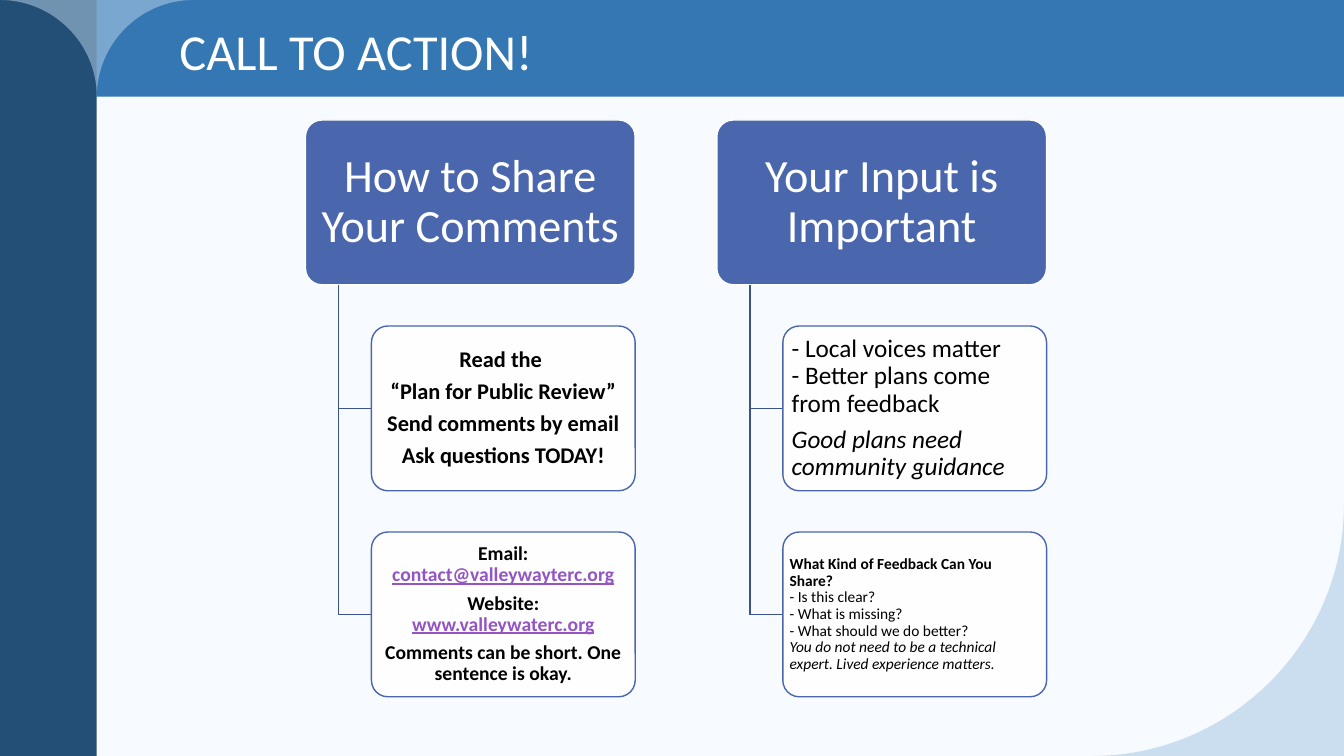
from lxml import etree
from pptx import Presentation
from pptx.dml.color import RGBColor
from pptx.enum import shapes, text
from pptx.oxml import ns
from pptx.util import Inches, Pt

BANNER, SIDEBAR, CORNER_TINT, SWOOSH = "3477B2", "234F77", "C0D8ED", "A1C4E3"
HEADING_FILL, BRANCH, LINK = "4A66AC", "3B528A", "9454C3"
PAGE, WHITE, BLACK = "F7FAFE", "FFFFFF", "000000"
BAND = 0.96
CENTER, LEFT = text.PP_ALIGN.CENTER, text.PP_ALIGN.LEFT


def color(hex_string):
    return RGBColor.from_string(hex_string)


def quarter(start, corner, end):
    """Bezier points of a quarter circle that bulges towards corner."""
    controls = [tuple(a + 0.55 * (c - a) for a, c in zip(point, corner))
                for point in (start, end)]
    return controls + [end]


class SlideBuilder:
    """Holds the current slide and the shared text style."""

    font = "Calibri"
    line_spacing = 0.9
    space_ratio = 0.36

    def __init__(self, presentation):
        self.slide = presentation.slides.add_slide(presentation.slide_layouts[5])
        background = self.slide.background.fill
        background.solid()
        background.fore_color.rgb = color(PAGE)

    def paint(self, shape, fill=None, line=None, opacity=100):
        shape.shadow.inherit = False
        if fill:
            shape.fill.solid()
            shape.fill.fore_color.rgb = color(fill)
            if opacity < 100:
                tint = shape.element.spPr.find(ns.qn("a:solidFill"))[0]
                etree.SubElement(tint, ns.qn("a:alpha"), val=str(opacity * 1000))
        else:
            shape.fill.background()
        if line:
            shape.line.color.rgb = color(line)
            shape.line.width = Pt(1)
        else:
            shape.line.fill.background()

    def box(self, kind, left, top, width, height, **paint):
        shape = self.slide.shapes.add_shape(
            kind, Inches(left), Inches(top), Inches(width), Inches(height))
        self.paint(shape, **paint)
        return shape

    def outline(self, start, *segments, close=True, **paint):
        """Freeform; a segment is a list of one point (line) or three (curve)."""
        scaled = [(Inches(x), Inches(y)) for segment in segments for x, y in segment]
        builder = self.slide.shapes.build_freeform(Inches(start[0]), Inches(start[1]))
        builder.add_line_segments(scaled, close=close)
        shape = builder.convert_to_shape()
        lines = iter(list(shape.element.iter(ns.qn("a:lnTo"))))
        for segment in segments:
            members = [next(lines) for _ in segment]
            if len(members) == 3:
                curve = etree.Element(ns.qn("a:cubicBezTo"))
                members[0].addprevious(curve)
                for member in members:
                    curve.append(member[0])
                    member.getparent().remove(member)
        self.paint(shape, **paint)

    def title(self, words, left, top, width, height):
        title = self.slide.shapes.title
        title.left, title.top = Inches(left), Inches(top)
        title.width, title.height = Inches(width), Inches(height)
        frame = title.text_frame
        frame.text = words
        frame.vertical_anchor = text.MSO_ANCHOR.MIDDLE
        paragraph = frame.paragraphs[0]
        paragraph.alignment = LEFT
        self.style(paragraph.font, 36, WHITE)
        title.element.getparent().append(title.element)  # in front of the banner

    def style(self, font, size, ink, bold=False):
        font.name, font.size, font.bold = self.font, Pt(size), bold
        font.color.rgb = color(ink)

    def card(self, left, top, width, height, paragraphs, size, ink=BLACK, align=CENTER,
             bold=False, inset=(0.03, 0.02, 0.03), break_size=None, **paint):
        """Rounded box; a paragraph lists (words, flags), inset is left, top/bottom, right."""
        shape = self.box(shapes.MSO_SHAPE.ROUNDED_RECTANGLE, left, top, width, height, **paint)
        shape.adjustments[0] = 0.1
        frame = shape.text_frame
        frame.word_wrap = True
        frame.vertical_anchor = text.MSO_ANCHOR.MIDDLE
        frame.margin_left, frame.margin_right = Inches(inset[0]), Inches(inset[2])
        frame.margin_top = frame.margin_bottom = Inches(inset[1])
        for index, runs in enumerate(paragraphs):
            paragraph = frame.add_paragraph() if index else frame.paragraphs[0]
            paragraph.alignment = align
            paragraph.line_spacing = self.line_spacing
            paragraph.space_after = Pt(size * self.space_ratio)
            self.style(paragraph.font, size, ink, bold)
            for words, flags in runs:
                self.run(paragraph, words, flags, break_size or size)

    def run(self, paragraph, words, flags, break_size):
        for index, line in enumerate(words.split("\n")):
            if index:
                paragraph.add_line_break()
                line_break = paragraph._p.findall(ns.qn("a:br"))[-1]
                etree.SubElement(line_break, ns.qn("a:rPr"), sz=str(break_size * 100))
            if not line:
                continue
            line_run = paragraph.add_run()
            line_run.text = line
            if flags == "bold":
                line_run.font.bold = True
            elif flags == "italic":
                line_run.font.italic = True
            elif flags == "link":
                line_run.font.underline = True
                line_run.font.color.rgb = color(LINK)


def draw_frame(builder):
    rectangle = shapes.MSO_SHAPE.RECTANGLE
    builder.box(rectangle, 0, 0, 13.33, BAND, fill=BANNER)
    builder.box(rectangle, 0, 0, BAND, 7.5, fill=SIDEBAR)
    right, tip, left = (2 * BAND, 0), (BAND, BAND), (0, 0)
    builder.outline(right, quarter(right, (BAND, 0), tip), quarter(tip, (BAND, 0), left),
                    fill=CORNER_TINT, opacity=50)
    upper, corner, lower = (13.33, 5), (13.33, 7.5), (10.83, 7.5)
    builder.outline(upper, [corner], [lower], quarter(lower, corner, upper),
                    fill=SWOOSH, opacity=50)


def draw_column(builder, left, heading, cards):
    top, width = 1.19, 3.27
    height, indent = width / 2, width / 10
    pitch = height * 1.25
    builder.card(left, top, width, height, [[(heading, "")]], 33, WHITE,
                 inset=(0.07, 0.05, 0.07), fill=HEADING_FILL, line=WHITE)
    trunk, card_left = left + indent, left + 2 * indent
    for row, card in enumerate(cards, 1):
        card_top = top + row * pitch
        middle = card_top + height / 2
        builder.outline((trunk, top + height), [(trunk, middle)], [(card_left, middle)],
                        close=False, line=BRANCH)
        builder.card(card_left, card_top, width - 2 * indent, height,
                     fill=WHITE, opacity=90, line=HEADING_FILL, **card)


def main():
    presentation = Presentation()
    presentation.slide_width, presentation.slide_height = Inches(13.33), Inches(7.5)
    builder = SlideBuilder(presentation)
    draw_frame(builder)

    steps = ["Read the ", "“Plan for Public Review”", "Send comments by email",
             "Ask questions TODAY!"]
    contacts = [
        [("Email: ", ""), ("contact@valleywayterc.org", "link")],
        [("Website: ", ""), ("www.valleywaterc.org", "link")],
        [("Comments can be short. One sentence is okay.", "")],
    ]
    reasons = [
        [("- Local voices matter\n- Better plans come from feedback", "")],
        [("Good plans need community guidance", "italic")],
    ]
    feedback = [[
        ("What Kind of Feedback Can You Share?\n", "bold"),
        ("- Is this clear?\n- What is missing?\n- What should we do better?\n", ""),
        ("You do not need to be a technical expert. Lived experience matters.", "italic"),
    ]]
    draw_column(builder, 3.03, "How to Share Your Comments", [
        dict(paragraphs=[[(step, "")] for step in steps], size=16, bold=True),
        dict(paragraphs=contacts, size=14, bold=True),
    ])
    draw_column(builder, 7.11, "Your Input is Important", [
        dict(paragraphs=reasons, size=18, align=LEFT, inset=(0.04, 0.03, 0.04)),
        dict(paragraphs=feedback, size=11, align=LEFT, inset=(0.02, 0.02, 0.1),
             break_size=12),
    ])
    builder.title("CALL TO ACTION!", 1.68, 0.14, 9.54, 0.71)
    presentation.save("out.pptx")


if __name__ == "__main__":
    main()
